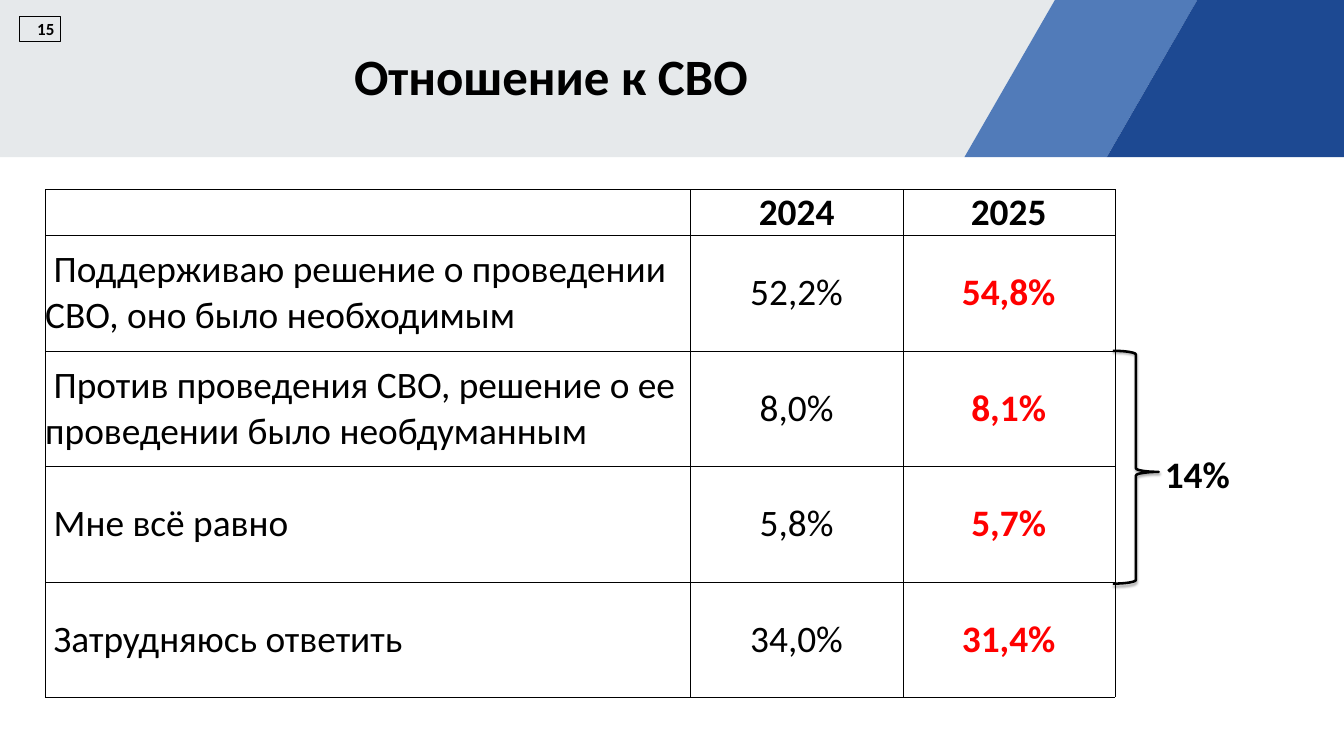
import pptx
import pptx.dml.color
import pptx.enum.shapes
import pptx.enum.text
import pptx.oxml
import pptx.oxml.ns
import pptx.util

Inches = pptx.util.Inches
Pt = pptx.util.Pt
RGBColor = pptx.dml.color.RGBColor
PP_ALIGN = pptx.enum.text.PP_ALIGN
MIDDLE = pptx.enum.text.MSO_ANCHOR.MIDDLE
MSO_SHAPE = pptx.enum.shapes.MSO_SHAPE

BLACK = RGBColor(0x00, 0x00, 0x00)
RED = RGBColor(0xFF, 0x00, 0x00)
PALE_GREY = RGBColor(0xE6, 0xE9, 0xEB)
MID_BLUE = RGBColor(0x51, 0x7B, 0xB9)
DARK_BLUE = RGBColor(0x1D, 0x49, 0x92)

FONT = "Calibri"
SLIDE_WIDTH, SLIDE_HEIGHT = Inches(21.99), Inches(12.37)
BAND_HEIGHT = Inches(2.57)
BAND_SLANT = Inches(1.48)
COLUMN_WIDTHS = [Inches(10.56), Inches(3.47), Inches(3.47)]
HEADER_HEIGHT, ROW_HEIGHT = Inches(0.75), Inches(1.89)

ANSWERS = [
    ("", "2024", "2025"),
    (" Поддерживаю решение о проведении СВО, оно было необходимым", "52,2%", "54,8%"),
    (" Против проведения СВО, решение о ее проведении было необдуманным", "8,0%", "8,1%"),
    (" Мне всё равно", "5,8%", "5,7%"),
    (" Затрудняюсь ответить", "34,0%", "31,4%"),
]


def write(text_frame, text, size, bold=True, color=BLACK, align=PP_ALIGN.LEFT):
    text_frame.text = text
    paragraph = text_frame.paragraphs[0]
    paragraph.alignment = align
    font = paragraph.font
    if paragraph.runs:
        font = paragraph.runs[0].font
    font.name, font.size, font.bold = FONT, Pt(size), bold
    font.color.rgb = color


def add_header_bands(slide, left, top, width, height):
    """Three bands side by side, parted by slanted edges."""
    edges = [
        (left, left),
        (left + Inches(17.26), left + Inches(17.26) - BAND_SLANT),
        (left + Inches(19.59), left + Inches(19.59) - BAND_SLANT),
        (left + width, left + width),
    ]
    bottom = top + height
    for start, end, color in zip(edges, edges[1:], (PALE_GREY, MID_BLUE, DARK_BLUE)):
        outline = slide.shapes.build_freeform(start[0], top, scale=1.0)
        outline.add_line_segments([(end[0], top), (end[1], bottom), (start[1], bottom)])
        band = outline.convert_to_shape()
        band.shadow.inherit = False
        band.fill.solid()
        band.fill.fore_color.rgb = color
        band.line.fill.background()


def add_title(slide, left, top, width, height):
    title = slide.shapes.title
    title.left, title.top, title.width, title.height = left, top, width, height
    title.text_frame.vertical_anchor = pptx.enum.text.MSO_ANCHOR.TOP
    title.text_frame.auto_size = pptx.enum.text.MSO_AUTO_SIZE.NONE
    write(title.text_frame, "Отношение к СВО", 60, align=PP_ALIGN.CENTER)
    properties = title.text_frame.paragraphs[0]._p.get_or_add_pPr()
    properties.set("indent", str(Inches(0.59)))
    # The title has to lie in front of the bands.
    slide.shapes._spTree.append(title._element)


def add_page_number(slide, left, top, width, height):
    number = slide.shapes.add_shape(MSO_SHAPE.RECTANGLE, left, top, width, height)
    number.shadow.inherit = False
    number.fill.background()
    number.line.color.rgb = BLACK
    number.line.width = Pt(0.75)
    number.text_frame.vertical_anchor = MIDDLE
    write(number.text_frame, "15", 20, align=PP_ALIGN.RIGHT)


def format_cell(cell):
    cell.vertical_anchor = MIDDLE
    cell.margin_left = cell.margin_right = cell.margin_top = cell.margin_bottom = 0
    namespace = pptx.oxml.ns.nsdecls("a")
    for side in ("lnL", "lnR", "lnT", "lnB"):
        border = pptx.oxml.parse_xml(
            f'<a:{side} {namespace} w="{Pt(0.5)}"><a:solidFill>'
            f'<a:srgbClr val="{BLACK}"/></a:solidFill></a:{side}>'
        )
        cell._tc.get_or_add_tcPr().append(border)
    cell.fill.background()


def add_answer_table(slide, left, top, width, height):
    table = slide.shapes.add_table(
        len(ANSWERS), len(COLUMN_WIDTHS), left, top, width, height
    ).table
    table.first_row = table.horz_banding = False
    for column, column_width in zip(table.columns, COLUMN_WIDTHS):
        column.width = column_width
    for row_index, answer in enumerate(ANSWERS):
        is_header = row_index == 0
        table.rows[row_index].height = HEADER_HEIGHT if is_header else ROW_HEIGHT
        for column_index, text in enumerate(answer):
            cell = table.cell(row_index, column_index)
            format_cell(cell)
            is_latest = column_index == 2
            write(
                cell.text_frame,
                text,
                44,
                bold=is_header or is_latest,
                color=RED if is_latest and not is_header else BLACK,
                align=PP_ALIGN.CENTER if column_index else PP_ALIGN.LEFT,
            )


def add_brace_total(slide, left, top, width, height):
    """Brace over two rows of the table, with their sum beside it."""
    brace = slide.shapes.add_shape(MSO_SHAPE.RIGHT_BRACE, left, top, width, height)
    brace.adjustments[0], brace.adjustments[1] = 0.08, 0.52
    brace.fill.background()
    brace.line.color.rgb = BLACK
    brace.line.width = Pt(3)
    brace._element.spPr.append(pptx.oxml.parse_xml(
        f'<a:effectLst {pptx.oxml.ns.nsdecls("a")}>'
        f'<a:outerShdw blurRad="{Pt(3.1)}" dist="{Pt(1.8)}" dir="5400000" rotWithShape="0">'
        f'<a:srgbClr val="{BLACK}"><a:alpha val="35000"/></a:srgbClr>'
        "</a:outerShdw></a:effectLst>"
    ))
    total = slide.shapes.add_textbox(
        left + width, top + Inches(1.6), Inches(1.62), Inches(0.84)
    )
    total.text_frame.word_wrap = True
    write(total.text_frame, "14%", 44)


def main():
    presentation = pptx.Presentation()
    presentation.slide_width, presentation.slide_height = SLIDE_WIDTH, SLIDE_HEIGHT
    slide = presentation.slides.add_slide(presentation.slide_layouts[5])
    add_header_bands(slide, 0, 0, SLIDE_WIDTH, BAND_HEIGHT)
    add_title(slide, Inches(1.33), Inches(0.68), Inches(14.78), Inches(1.75))
    add_page_number(slide, Inches(0.32), Inches(0.26), Inches(0.67), Inches(0.42))
    table_left, table_top = Inches(0.74), Inches(3.1)
    table_width = sum(COLUMN_WIDTHS)
    table_height = HEADER_HEIGHT + ROW_HEIGHT * (len(ANSWERS) - 1)
    add_answer_table(slide, table_left, table_top, table_width, table_height)
    add_brace_total(
        slide,
        table_left + table_width - Inches(0.03),
        table_top + HEADER_HEIGHT + ROW_HEIGHT,
        Inches(0.75),
        Inches(3.81),
    )
    presentation.save("out.pptx")


if __name__ == "__main__":
    main()
